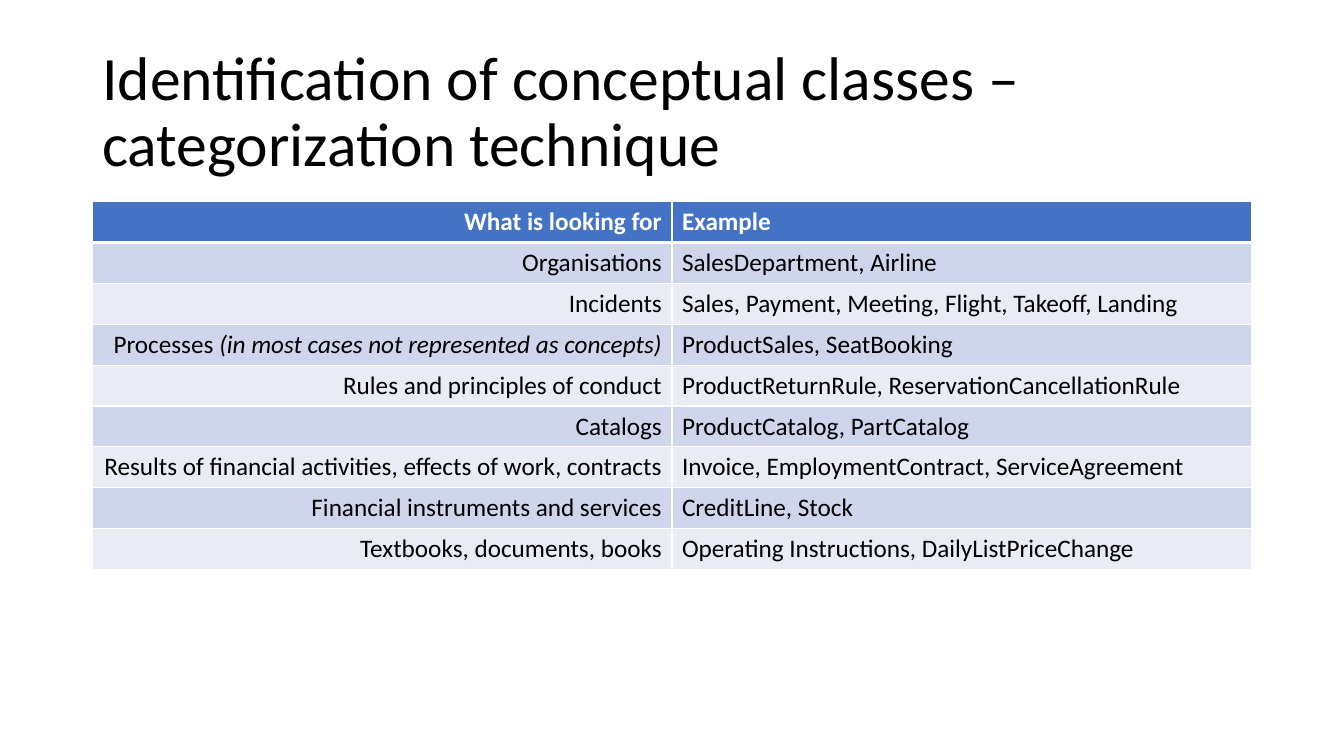
from lxml.etree import SubElement
from pptx import Presentation
from pptx.dml.color import RGBColor as Rgb
from pptx.enum.text import MSO_ANCHOR as Anchor, PP_ALIGN as Align
from pptx.oxml.ns import qn
from pptx.util import Pt

COLORS = {
    "text": "000000",
    "white": "FFFFFF",
    "header": "4472C4",
    "odd": "CFD5EA",
    "even": "E9EBF5",
}

HEADINGS = ("What is looking for", "Example")
# A category is a list of text parts; every second part is italic.
CATEGORIES = [
    (["Organisations"], "SalesDepartment, Airline"),
    (["Incidents"], "Sales, Payment, Meeting, Flight, Takeoff, Landing"),
    (["Processes ", "(in most cases not represented as concepts)"],
     "ProductSales, SeatBooking"),
    (["Rules and principles of conduct"],
     "ProductReturnRule, ReservationCancellationRule"),
    (["Catalogs"], "ProductCatalog, PartCatalog"),
    (["Results of financial activities, effects of work, contracts"],
     "Invoice, EmploymentContract, ServiceAgreement"),
    (["Financial instruments and services"], "CreditLine, Stock"),
    (["Textbooks, documents, books"],
     "Operating Instructions, DailyListPriceChange"),
]


class SlideBuilder:
    font = "Calibri"

    def __init__(self, slide):
        self.slide = slide

    def add_run(self, paragraph, text, color="text", **formats):
        run = paragraph.add_run()
        run.text = text
        run.font.color.rgb = Rgb.from_string(COLORS[color])
        for key, value in {"name": self.font, **formats}.items():
            setattr(run.font, key, value)

    def add_title(self, text, left, top, width, height):
        box = self.slide.shapes.add_textbox(Pt(left), Pt(top), Pt(width), Pt(height))
        frame = box.text_frame
        frame.word_wrap = True
        frame.vertical_anchor = Anchor.MIDDLE
        frame.paragraphs[0].line_spacing = 0.9
        self.add_run(frame.paragraphs[0], text, size=Pt(44))

    def add_borders(self, cell, **widths):
        """Draw white cell borders; widths maps L, R, T and B to points."""
        properties = cell._tc.get_or_add_tcPr()
        for side, width in widths.items():
            line = SubElement(properties, qn(f"a:ln{side}"), w=str(Pt(width)))
            fill = SubElement(line, qn("a:solidFill"))
            SubElement(fill, qn("a:srgbClr"), val=COLORS["white"])

    def add_category_table(self, left, top, width, row_height):
        rows = [([HEADINGS[0]], HEADINGS[1]), *CATEGORIES]
        table = self.slide.shapes.add_table(
            len(rows), 2, Pt(left), Pt(top), Pt(width), Pt(row_height * len(rows))
        ).table
        for row, (category, example) in enumerate(rows):
            table.rows[row].height = Pt(row_height)
            is_header = row == 0
            band = "header" if is_header else "odd" if row % 2 else "even"
            columns = ((category, Align.RIGHT), ([example], Align.LEFT))
            for column, (parts, alignment) in enumerate(columns):
                cell = table.cell(row, column)
                self.add_borders(cell, L=1, R=1, T=3 if row == 1 else 1,
                                 B=3 if is_header else 1)
                cell.fill.solid()
                cell.fill.fore_color.rgb = Rgb.from_string(COLORS[band])
                paragraph = cell.text_frame.paragraphs[0]
                paragraph.alignment = alignment
                for index, part in enumerate(parts):
                    self.add_run(paragraph, part, "white" if is_header else "text",
                                 size=Pt(18), bold=is_header, italic=index % 2 == 1)


def main():
    deck = Presentation()
    deck.slide_width, deck.slide_height = Pt(960), Pt(540)
    builder = SlideBuilder(deck.slides.add_slide(deck.slide_layouts[6]))
    builder.add_title(
        "Identification of conceptual classes – categorization technique",
        66, 28.75, 828, 104.4)
    builder.add_category_table(66, 144, 828, 29.2)
    deck.save("out.pptx")


if __name__ == "__main__":
    main()
